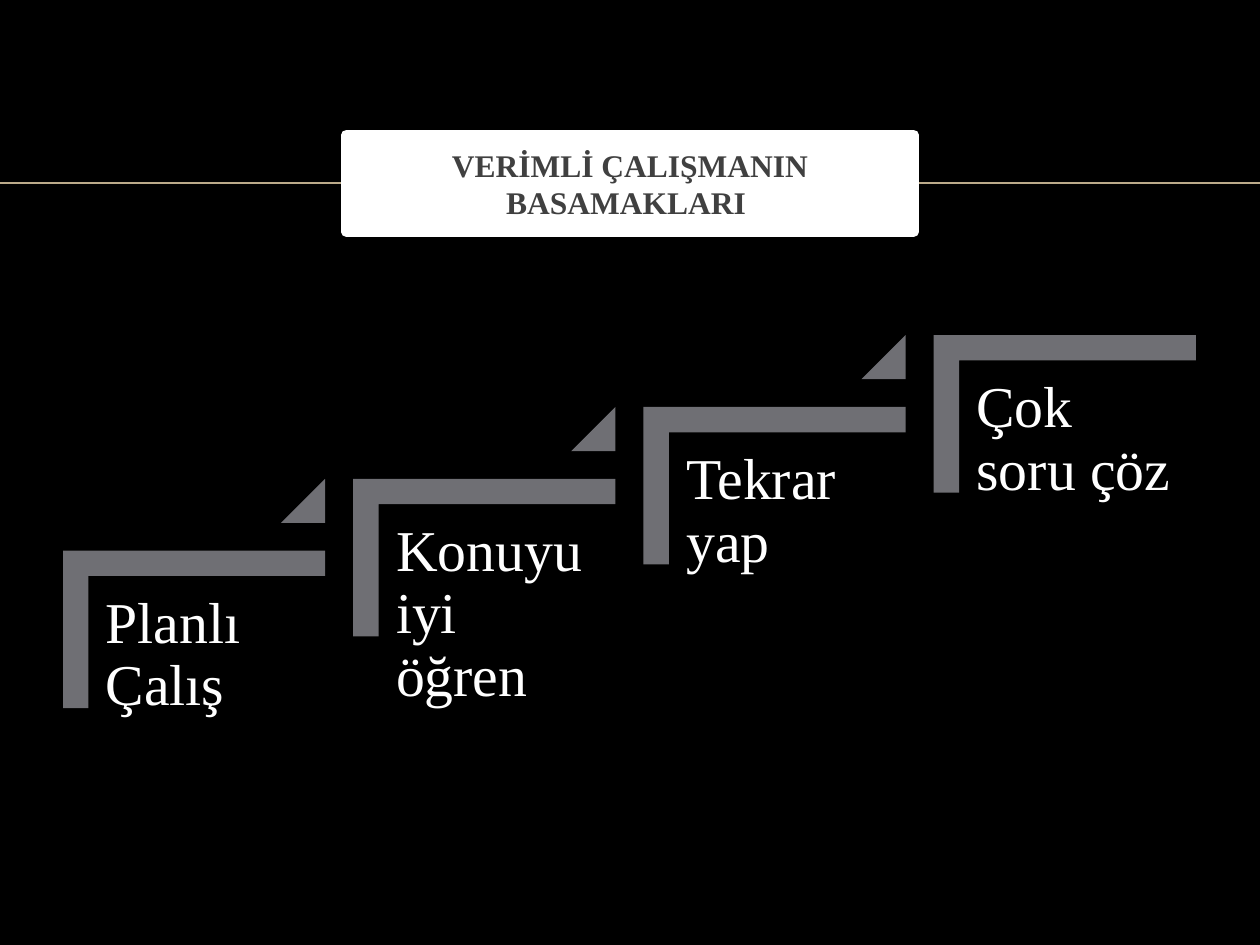
from dataclasses import dataclass

import pptx
import pptx.dml.color
import pptx.enum.shapes
import pptx.enum.text
import pptx.oxml
import pptx.oxml.ns
import pptx.util

Inches = pptx.util.Inches
Pt = pptx.util.Pt
RGB = pptx.dml.color.RGBColor
SHAPE = pptx.enum.shapes.MSO_SHAPE


@dataclass(frozen=True)
class Theme:
    background: RGB = RGB.from_string("000000")
    rule: RGB = RGB.from_string("BBAA8A")
    panel: RGB = RGB.from_string("FFFFFF")
    title: RGB = RGB.from_string("404040")
    step: RGB = RGB.from_string("6F6F74")
    label: RGB = RGB.from_string("FFFFFF")
    font: str = "Times New Roman"
    title_size: Pt = Pt(18)
    label_size: Pt = Pt(33)


THEME = Theme()
STEPS = ["Planlı Çalış", "Konuyu iyi öğren", "Tekrar yap", "Çok soru çöz"]


def style_text(paragraph, size, color):
    paragraph.font.name = THEME.font
    paragraph.font.size = size
    paragraph.font.color.rgb = color


def add_solid(shapes, kind, left, top, width, height):
    solid = shapes.add_shape(kind, left, top, width, height)
    solid.fill.solid()
    solid.fill.fore_color.rgb = THEME.step
    solid.line.fill.background()
    solid.shadow.inherit = False
    return solid


def add_title(slide, left, top, width, height, wording):
    """Title panel, with a rule across the slide behind it."""
    middle = top + height // 2
    rule = slide.shapes.add_connector(
        pptx.enum.shapes.MSO_CONNECTOR.STRAIGHT, 0, middle, Inches(10), middle)
    rule.line.color.rgb = THEME.rule
    rule.line.width = Pt(1)
    rule.element.spPr.append(pptx.oxml.parse_xml(
        f"<a:effectLst {pptx.oxml.ns.nsdecls('a')}/>"))

    title = slide.shapes.title
    title.element.addprevious(rule.element)
    title.left, title.top, title.width, title.height = left, top, width, height
    title.fill.solid()
    title.fill.fore_color.rgb = THEME.panel
    title.line.color.rgb = THEME.panel
    title.line.width = Pt(6)
    frame = title.text_frame
    frame.text = wording
    frame.word_wrap = True
    frame.auto_size = pptx.enum.text.MSO_AUTO_SIZE.NONE
    frame.vertical_anchor = pptx.enum.text.MSO_ANCHOR.MIDDLE
    heading = frame.paragraphs[0]
    heading.alignment = pptx.enum.text.PP_ALIGN.CENTER
    heading.space_before = Pt(4)
    style_text(heading, THEME.title_size, THEME.title)
    heading.font.bold = True


def add_step(shapes, left, top, width, height, wording, has_next):
    """Corner bracket with its label and, before a next step, a triangle."""
    # The bracket is a corner turned by 90 degrees about its centre.
    turn = (width - height) // 2
    bracket = add_solid(shapes, SHAPE.CORNER, left + turn, top - turn, height, width)
    bracket.rotation = 90
    bracket.adjustments[0] = bracket.adjustments[1] = 0.161

    indent = Inches(0.2)
    label = shapes.add_textbox(left + indent, top + indent, width - indent, Inches(1.65))
    frame = label.text_frame
    frame.word_wrap = True
    frame.margin_left = frame.margin_right = Inches(0.14)
    frame.margin_top = frame.margin_bottom = Inches(0.14)
    frame.text = wording
    frame.paragraphs[0].line_spacing = 0.9
    style_text(frame.paragraphs[0], THEME.label_size, THEME.label)

    if has_next:
        side = Inches(0.35)
        triangle = add_solid(shapes, SHAPE.ISOSCELES_TRIANGLE,
                             left + width - side, top - Inches(0.57), side, side)
        triangle.adjustments[0] = 1


def add_staircase(slide, left, top, width, height, steps):
    """Equal steps rising from bottom left to top right of the box."""
    shapes = slide.shapes.add_group_shape().shapes
    step_width, step_height = Inches(2.08), Inches(1.25)
    last = len(steps) - 1
    run = (width - step_width) // last
    rise = (height - step_height) // last
    for i, wording in enumerate(steps):
        add_step(shapes, left + i * run, top + (last - i) * rise,
                 step_width, step_height, wording, i < last)


def main():
    deck = pptx.Presentation()
    deck.slide_width, deck.slide_height = Inches(10), Inches(7.5)
    slide = deck.slides.add_slide(deck.slide_layouts.get_by_name("Title Only"))
    slide.background.fill.solid()
    slide.background.fill.fore_color.rgb = THEME.background
    add_title(slide, Inches(2.75), Inches(1.07), Inches(4.5), Inches(0.77),
              "VERİMLİ ÇALIŞMANIN BASAMAKLARI ")
    add_staircase(slide, Inches(0.5), Inches(2.66), Inches(8.99), Inches(2.96), STEPS)
    deck.save("out.pptx")


if __name__ == "__main__":
    main()
